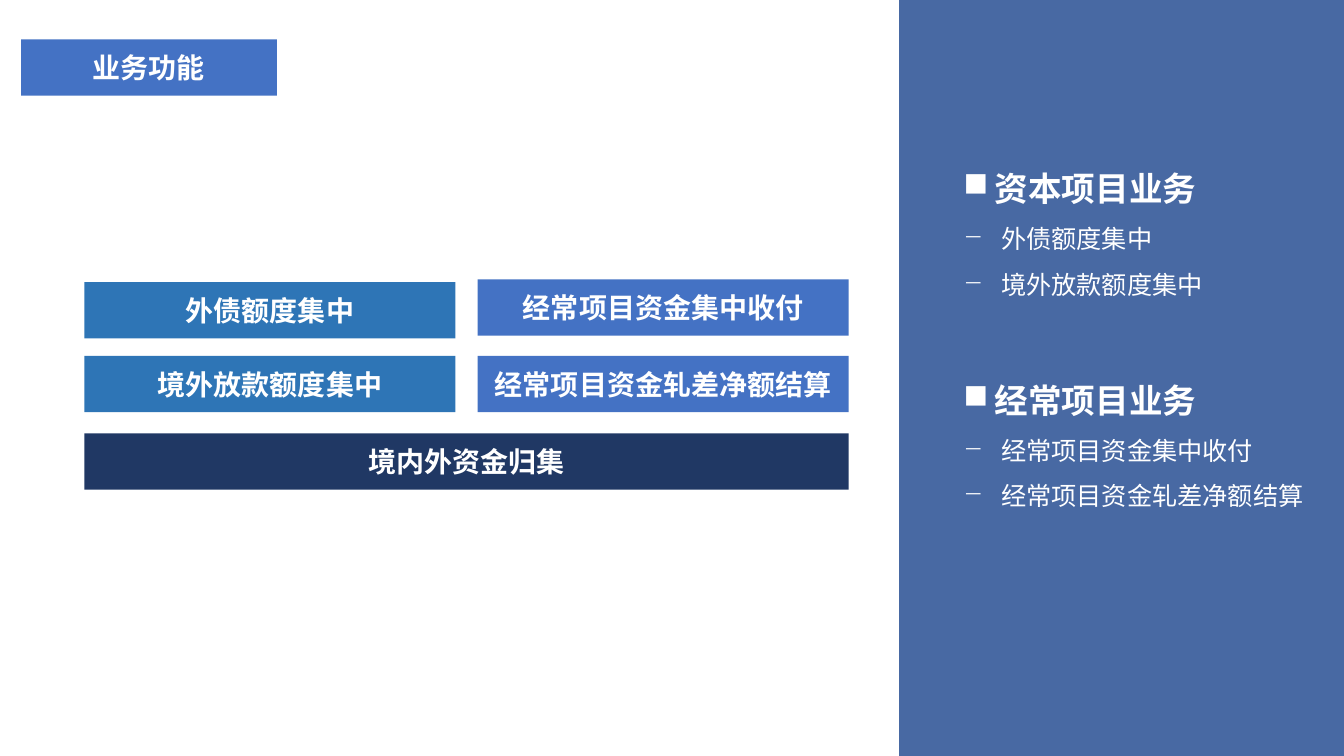
from lxml import etree
from pptx import Presentation
from pptx.dml.color import RGBColor
from pptx.enum.shapes import MSO_SHAPE
from pptx.enum.text import MSO_ANCHOR, MSO_AUTO_SIZE, PP_ALIGN
from pptx.oxml.ns import qn
from pptx.util import Cm, Pt

RECTANGLE = MSO_SHAPE.RECTANGLE
MIDDLE = MSO_ANCHOR.MIDDLE
CENTER = PP_ALIGN.CENTER
NO_AUTOFIT = MSO_AUTO_SIZE.NONE
GROW = MSO_AUTO_SIZE.SHAPE_TO_FIT_TEXT

WHITE = RGBColor(0xFF, 0xFF, 0xFF)
NAVY = RGBColor(0x20, 0x38, 0x64)
TEAL_BLUE = RGBColor(0x2E, 0x75, 0xB6)
BLUE = RGBColor(0x44, 0x72, 0xC4)
PANEL_BLUE = RGBColor(0x2F, 0x55, 0x97)

FONT = "Noto Sans CJK SC"
SLIDE_WIDTH, SLIDE_HEIGHT = 33.87, 19.05
BOX_HEIGHT = 1.42
COLUMN_WIDTH = 9.35
LEFT_COLUMN, RIGHT_COLUMN = 2.13, 12.04
FULL_WIDTH = RIGHT_COLUMN + COLUMN_WIDTH - LEFT_COLUMN
PANEL_LEFT = 22.66
LIST_LEFT = 24.03

# Text, left, top, width, colour
FUNCTION_BOXES = [
    ("境内外资金归集", LEFT_COLUMN, 10.92, FULL_WIDTH, NAVY),
    ("外债额度集中", LEFT_COLUMN, 7.11, COLUMN_WIDTH, TEAL_BLUE),
    ("境外放款额度集中", LEFT_COLUMN, 8.97, COLUMN_WIDTH, TEAL_BLUE),
    ("经常项目资金集中收付", RIGHT_COLUMN, 7.04, COLUMN_WIDTH, BLUE),
    ("经常项目资金轧差净额结算", RIGHT_COLUMN, 8.97, COLUMN_WIDTH, BLUE),
]

# Heading, items, top, width
BUSINESS_LISTS = [
    ("资本项目业务", ["外债额度集中", "境外放款额度集中"], 3.61, 8.71),
    ("经常项目业务", ["经常项目资金集中收付", "经常项目资金轧差净额结算"], 8.94, 9.37),
]


def style_paragraph(para, size, bold):
    font = para.font
    font.size, font.bold, font.name = Pt(size), bold, FONT
    font.color.rgb = WHITE
    properties = para._p.pPr.find(qn("a:defRPr"))
    etree.SubElement(properties, qn("a:ea"), typeface=FONT)


def set_label(shape, text):
    frame = shape.text_frame
    frame.text = text
    frame.auto_size = NO_AUTOFIT
    frame.word_wrap = True
    frame.vertical_anchor = MIDDLE
    para = frame.paragraphs[0]
    para.alignment = CENTER
    style_paragraph(para, 20, True)


def fill_shape(shape, color):
    shape.fill.solid()
    shape.fill.fore_color.rgb = color


def add_rectangle(slide, left, top, width, height, color):
    box = slide.shapes.add_shape(RECTANGLE, Cm(left), Cm(top), Cm(width), Cm(height))
    box.shadow.inherit = False
    box.line.fill.background()
    fill_shape(box, color)
    return box


def set_opacity(shape, percent):
    color = shape._element.spPr.find(".//" + qn("a:srgbClr"))
    etree.SubElement(color, qn("a:alpha"), val=str(percent * 1000))


def set_title(slide, text):
    title = slide.shapes.title
    title.left, title.top = Cm(0.53), Cm(0.99)
    title.width, title.height = Cm(6.45), Cm(BOX_HEIGHT)
    fill_shape(title, BLUE)
    set_label(title, text)


def add_bullet(para, symbol, indent):
    properties = para._p.get_or_add_pPr()
    properties.set("marL", str(Cm(indent)))
    properties.set("indent", str(-Cm(indent)))
    etree.SubElement(properties, qn("a:buChar"), char=symbol)


def add_business_list(slide, heading, items, top, width):
    box = slide.shapes.add_textbox(Cm(LIST_LEFT), Cm(top), Cm(width), Cm(3.96))
    frame = box.text_frame
    frame.word_wrap = True
    frame.auto_size = GROW
    frame.text = "\n".join([heading, *items])
    for index, para in enumerate(frame.paragraphs):
        is_heading = index == 0
        para.line_spacing = 1.5
        if is_heading:
            add_bullet(para, "■", 0.79)
        else:
            add_bullet(para, "−", 0.95)
        style_paragraph(para, 24 if is_heading else 18, is_heading)


def main():
    deck = Presentation()
    deck.slide_width, deck.slide_height = Cm(SLIDE_WIDTH), Cm(SLIDE_HEIGHT)
    slide = deck.slides.add_slide(deck.slide_layouts[5])

    # Title
    set_title(slide, "业务功能")

    # Function boxes
    for text, left, top, width, color in FUNCTION_BOXES:
        box = add_rectangle(slide, left, top, width, BOX_HEIGHT, color)
        set_label(box, text)

    # Side panel with the business lists
    panel = add_rectangle(slide, PANEL_LEFT, 0, SLIDE_WIDTH - PANEL_LEFT, SLIDE_HEIGHT, PANEL_BLUE)
    set_opacity(panel, 88)
    for heading, items, top, width in BUSINESS_LISTS:
        add_business_list(slide, heading, items, top, width)

    deck.save("out.pptx")


if __name__ == "__main__":
    main()
